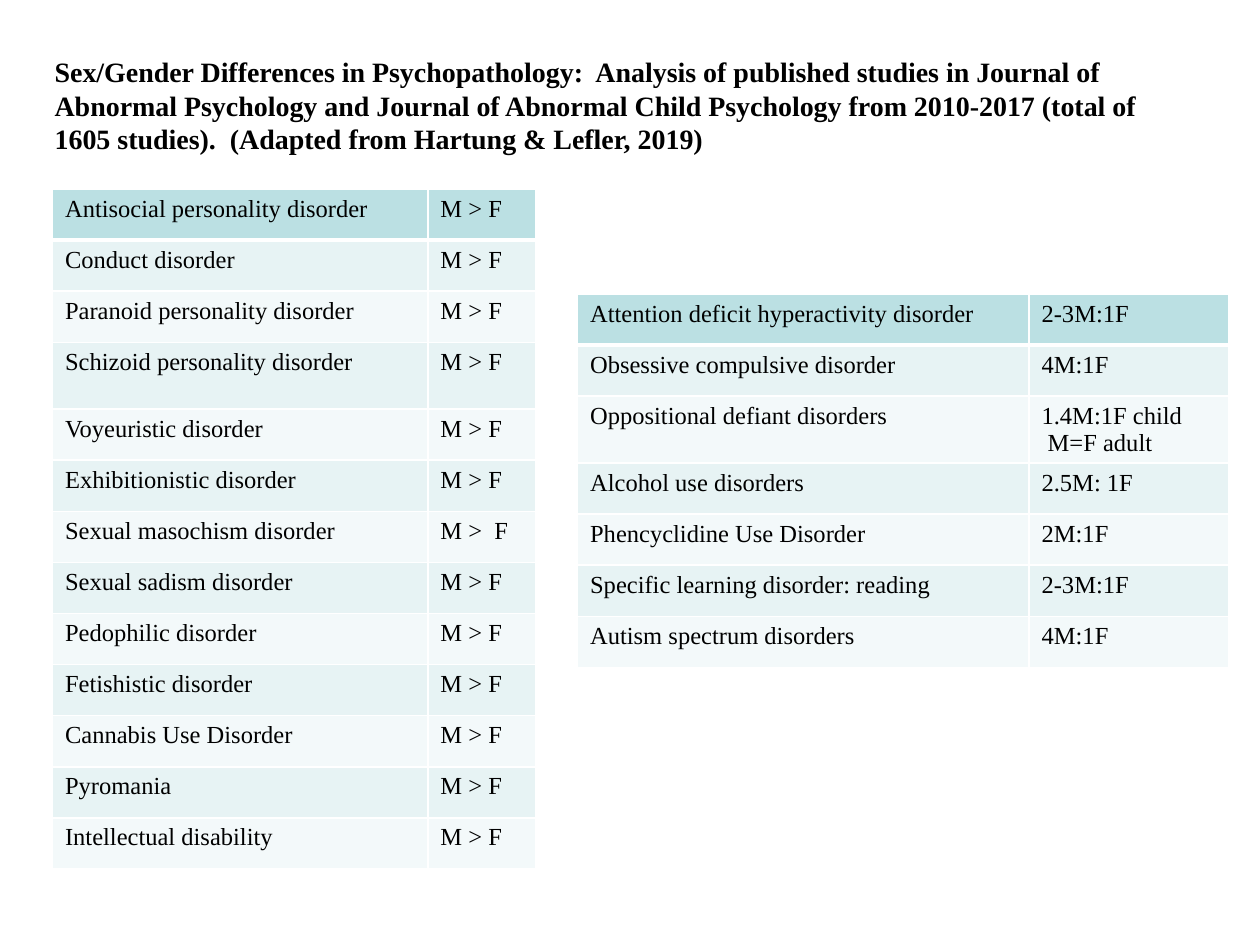
from lxml.etree import SubElement
from pptx import Presentation
from pptx.dml.color import RGBColor
from pptx.enum.text import MSO_ANCHOR, MSO_AUTO_SIZE, PP_ALIGN
from pptx.oxml.ns import qn
from pptx.util import Pt

FONT = "Times New Roman"
COLORS = {
    "text": "000000",
    "header": "BBE0E3",
    "odd": "E7F3F4",
    "even": "F3F9FA",
    "border": "FFFFFF",
}
TITLE = (
    "Sex/Gender Differences in Psychopathology:  Analysis of published studies "
    "in Journal of Abnormal Psychology and Journal of Abnormal Child Psychology "
    "from 2010-2017 (total of 1605 studies).  (Adapted from Hartung & Lefler, 2019)"
)
MORE_MALES = [
    ("Antisocial personality disorder", "M > F"),
    ("Conduct disorder", "M > F"),
    ("Paranoid personality disorder", "M > F"),
    ("Schizoid personality disorder", "M > F"),
    ("Voyeuristic disorder", "M > F"),
    ("Exhibitionistic disorder", "M > F"),
    ("Sexual masochism disorder", "M >  F"),
    ("Sexual sadism disorder", "M > F"),
    ("Pedophilic disorder", "M > F"),
    ("Fetishistic disorder", "M > F"),
    ("Cannabis Use Disorder", "M > F"),
    ("Pyromania", "M > F"),
    ("Intellectual disability", "M > F"),
]
SEX_RATIOS = [
    ("Attention deficit hyperactivity disorder", "2-3M:1F"),
    ("Obsessive compulsive disorder", "4M:1F"),
    ("Oppositional defiant disorders", "1.4M:1F child\vM=F adult"),
    ("Alcohol use disorders", "2.5M: 1F"),
    ("Phencyclidine Use Disorder", "2M:1F"),
    ("Specific learning disorder: reading", "2-3M:1F"),
    ("Autism spectrum disorders", "4M:1F"),
]
ROW_HEIGHT = 29.2
TALL_ROW_HEIGHT = 38.2


def format_font(paragraph, size, bold=False):
    """Give a paragraph the slide's typeface and text colour."""
    font = paragraph.font
    font.name, font.size, font.bold = FONT, Pt(size), bold
    font.color.rgb = RGBColor.from_string(COLORS["text"])


def add_title(slide):
    """Place and format the title placeholder."""
    title = slide.shapes.title
    title.left, title.top, title.width, title.height = Pt(24), Pt(36), Pt(654), Pt(48)
    frame = title.text_frame
    frame.text = TITLE
    frame.word_wrap = True
    frame.auto_size = MSO_AUTO_SIZE.NONE
    frame.vertical_anchor = MSO_ANCHOR.MIDDLE
    paragraph = frame.paragraphs[0]
    paragraph.alignment = PP_ALIGN.LEFT
    format_font(paragraph, 16, bold=True)


def set_borders(cell, row_index):
    """Draw white cell borders, thicker beneath the header row."""
    properties = cell._tc.get_or_add_tcPr()
    widths = {
        "lnL": 1,
        "lnR": 1,
        "lnT": 3 if row_index == 1 else 1,
        "lnB": 3 if row_index == 0 else 1,
    }
    for tag, width in widths.items():
        line = SubElement(properties, qn(f"a:{tag}"), w=str(Pt(width)))
        fill = SubElement(line, qn("a:solidFill"))
        SubElement(fill, qn("a:srgbClr"), val=COLORS["border"])


def fill_cell(cell, text, row_index):
    """Write one table cell with its band colour and borders."""
    cell.text = text
    paragraph = cell.text_frame.paragraphs[0]
    if "\v" in text:
        properties = paragraph._p.get_or_add_pPr()
        properties.set("marL", str(Pt(3.5)))
        properties.set("indent", str(Pt(-3.5)))
    format_font(paragraph, 14)
    set_borders(cell, row_index)
    band = "header" if row_index == 0 else "odd" if row_index % 2 else "even"
    cell.fill.solid()
    cell.fill.fore_color.rgb = RGBColor.from_string(COLORS[band])


def add_disorder_table(slide, rows, left, top, widths, tall_row):
    """Add a banded two-column table of disorders and sex differences."""
    heights = [TALL_ROW_HEIGHT if index == tall_row else ROW_HEIGHT
               for index in range(len(rows))]
    table = slide.shapes.add_table(
        len(rows), len(widths), Pt(left), Pt(top), Pt(sum(widths)), Pt(sum(heights))
    ).table
    for column, width in zip(table.columns, widths):
        column.width = Pt(width)
    for row_index, (height, texts) in enumerate(zip(heights, rows)):
        table.rows[row_index].height = Pt(height)
        for column_index, text in enumerate(texts):
            fill_cell(table.cell(row_index, column_index), text, row_index)


def main():
    """Build and save the slide."""
    presentation = Presentation()
    presentation.slide_width, presentation.slide_height = Pt(720), Pt(540)
    slide = presentation.slides.add_slide(presentation.slide_layouts[5])
    add_title(slide)
    add_disorder_table(slide, MORE_MALES, 30, 108, (214.5, 61.5), tall_row=3)
    add_disorder_table(slide, SEX_RATIOS, 330, 168, (258, 114), tall_row=2)
    presentation.save("out.pptx")


if __name__ == "__main__":
    main()
